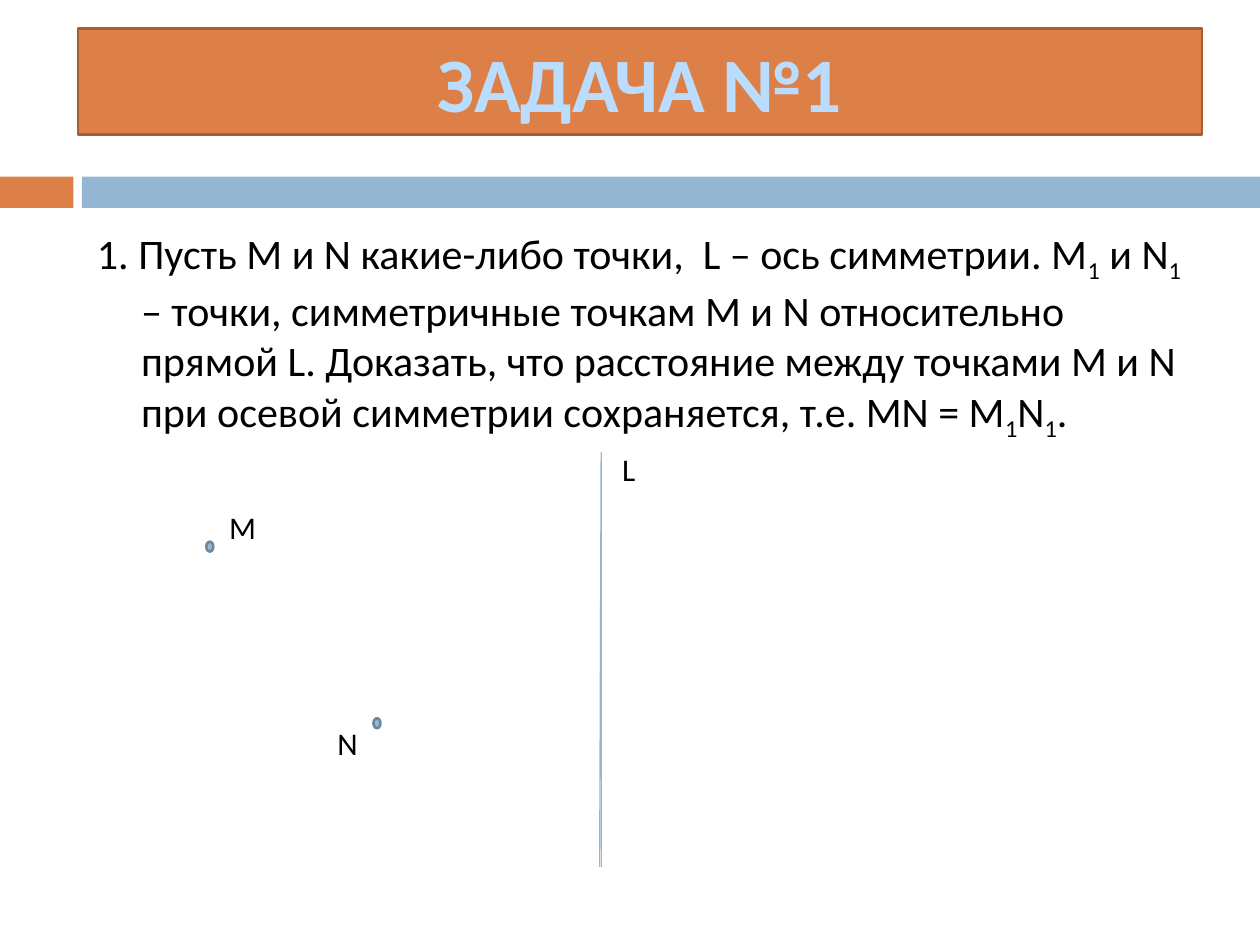
from lxml import etree
from pptx import Presentation
from pptx.dml.color import RGBColor
from pptx.enum import shapes, text
from pptx.oxml.ns import qn
from pptx.util import Cm, Pt

ORANGE = RGBColor(0xDD, 0x80, 0x47)
BROWN = RGBColor(0xA3, 0x5F, 0x35)
BLUE = RGBColor(0x94, 0xB6, 0xD2)
SLATE = RGBColor(0x6D, 0x87, 0x9B)
PALE = RGBColor(0xBA, 0xDD, 0xFF)
BLACK = RGBColor(0, 0, 0)


def place(sp, *box):
    for name, value in zip(("left", "top", "width", "height"), box):
        setattr(sp, name, Cm(value))


def style(r, size, color, bold=False):
    r.font.color.rgb = color
    fmt = {"name": "Calibri", "size": Pt(size), "bold": bold}
    for name, value in fmt.items():
        setattr(r.font, name, value)


prs = Presentation()
prs.slide_width, prs.slide_height = Cm(25.4), Cm(19.05)
s = prs.slides.add_slide(prs.slide_layouts[1])

title = s.shapes.title
place(title, 1.57, 0.58, 22.66, 2.13)
title.fill.solid()
title.fill.fore_color.rgb = ORANGE
title.line.color.rgb = BROWN
title.line.width = Pt(1.5)
tf = title.text_frame
tf.auto_size = text.MSO_AUTO_SIZE.NONE
tf.vertical_anchor = text.MSO_ANCHOR.MIDDLE
p = tf.paragraphs[0]
p.alignment = text.PP_ALIGN.CENTER
r = p.add_run()
r.text = "ЗАДАЧА №1"
style(r, 44, PALE, True)

body = s.placeholders[1]
place(body, 1.7, 4.45, 22.66, 12.5)
tf = body.text_frame
tf.auto_size = text.MSO_AUTO_SIZE.NONE
p = tf.paragraphs[0]
p.space_before = Pt(0)
pPr = p._p.get_or_add_pPr()
pPr.set("marL", str(Cm(0.89)))
pPr.set("indent", str(Cm(-0.89)))
etree.SubElement(pPr, qn("a:buNone"))
parts = [
    "1. Пусть M и N какие-либо точки,  L – ось симметрии. M", "1", " и N", "1",
    " – точки, симметричные точкам M и N относительно прямой L. Доказать, "
    "что расстояние между точками M и N при осевой симметрии сохраняется, "
    "т.е. MN = M", "1", "N", "1", ".",
]
for i, part in enumerate(parts):
    r = p.add_run()
    r.text = part
    style(r, 24, BLACK)
    if i % 2:
        r._r.get_or_add_rPr().set("baseline", "-25000")

RECT, OVAL = shapes.MSO_SHAPE.RECTANGLE, shapes.MSO_SHAPE.OVAL
for kind, box, fill, line in [
    (RECT, (0, 3.56, 1.48, 0.63), ORANGE, None),
    (RECT, (1.65, 3.56, 23.75, 0.63), BLUE, None),
    (OVAL, (4.16, 10.92, 0.14, 0.2), BLUE, SLATE),
    (OVAL, (7.53, 14.48, 0.14, 0.2), BLUE, SLATE),
]:
    sp = s.shapes.add_shape(kind, *map(Cm, box))
    sp.shadow.inherit = False
    sp.fill.solid()
    sp.fill.fore_color.rgb = fill
    if line is None:
        sp.line.fill.background()
    else:
        sp.line.color.rgb = line
        sp.line.width = Pt(1.5)

for label, x, y, w in [("М", 4.37, 10.11, 1), ("N", 6.55, 14.48, 0.8), ("L", 12.29, 8.94, 1.2)]:
    tf = s.shapes.add_textbox(Cm(x), Cm(y), Cm(w), Cm(1.03)).text_frame
    tf.word_wrap = True
    tf.auto_size = text.MSO_AUTO_SIZE.SHAPE_TO_FIT_TEXT
    r = tf.paragraphs[0].add_run()
    r.text = label
    style(r, 18, BLACK)

for end_x in (12.09, 12.12):
    axis = s.shapes.add_connector(
        shapes.MSO_CONNECTOR.STRAIGHT, Cm(12.12), Cm(9.12), Cm(end_x), Cm(17.48))
    axis.line.color.rgb = BLUE
    axis.line.width = Pt(0.79)
    etree.SubElement(axis._element.spPr, qn("a:effectLst"))

prs.save("out.pptx")
